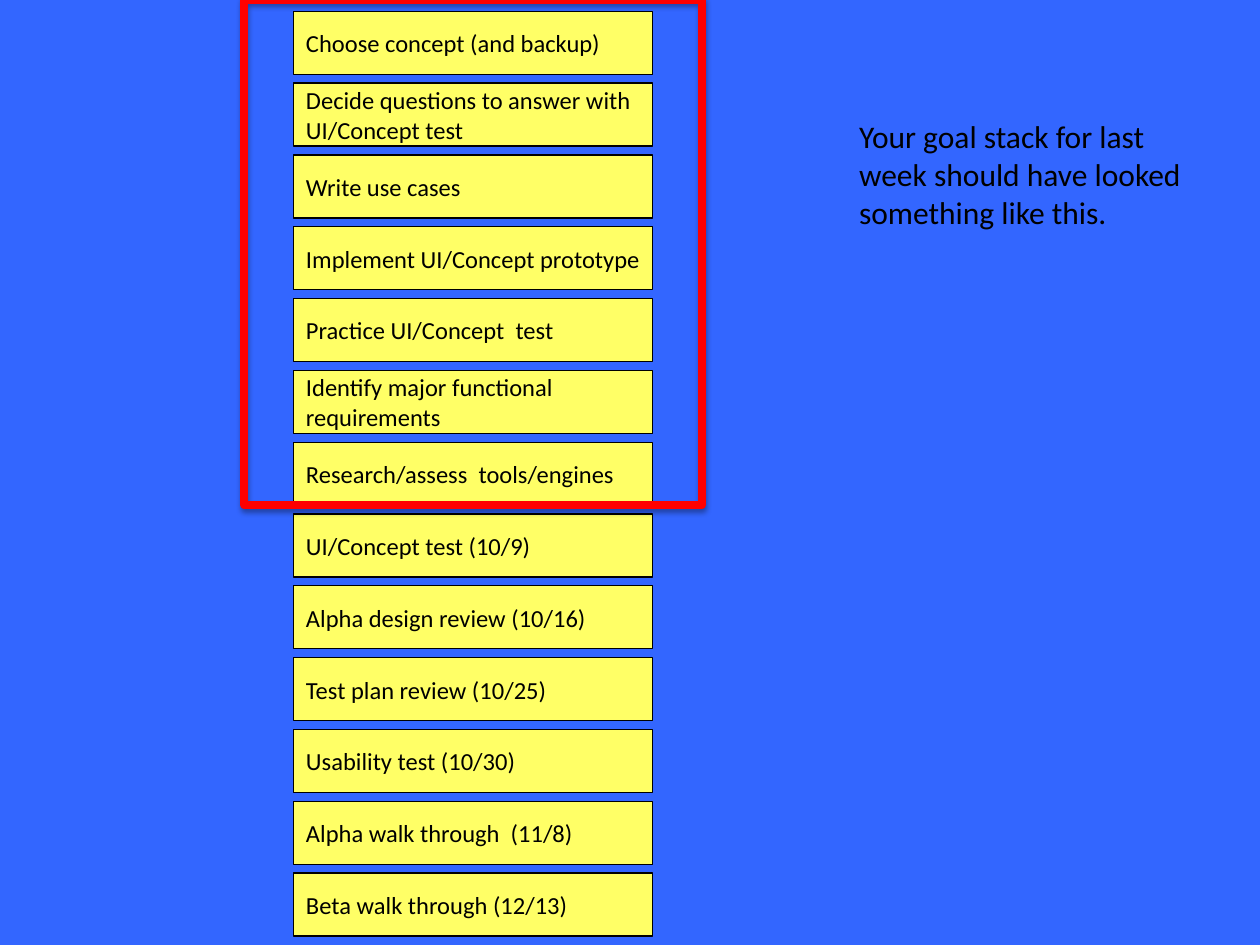
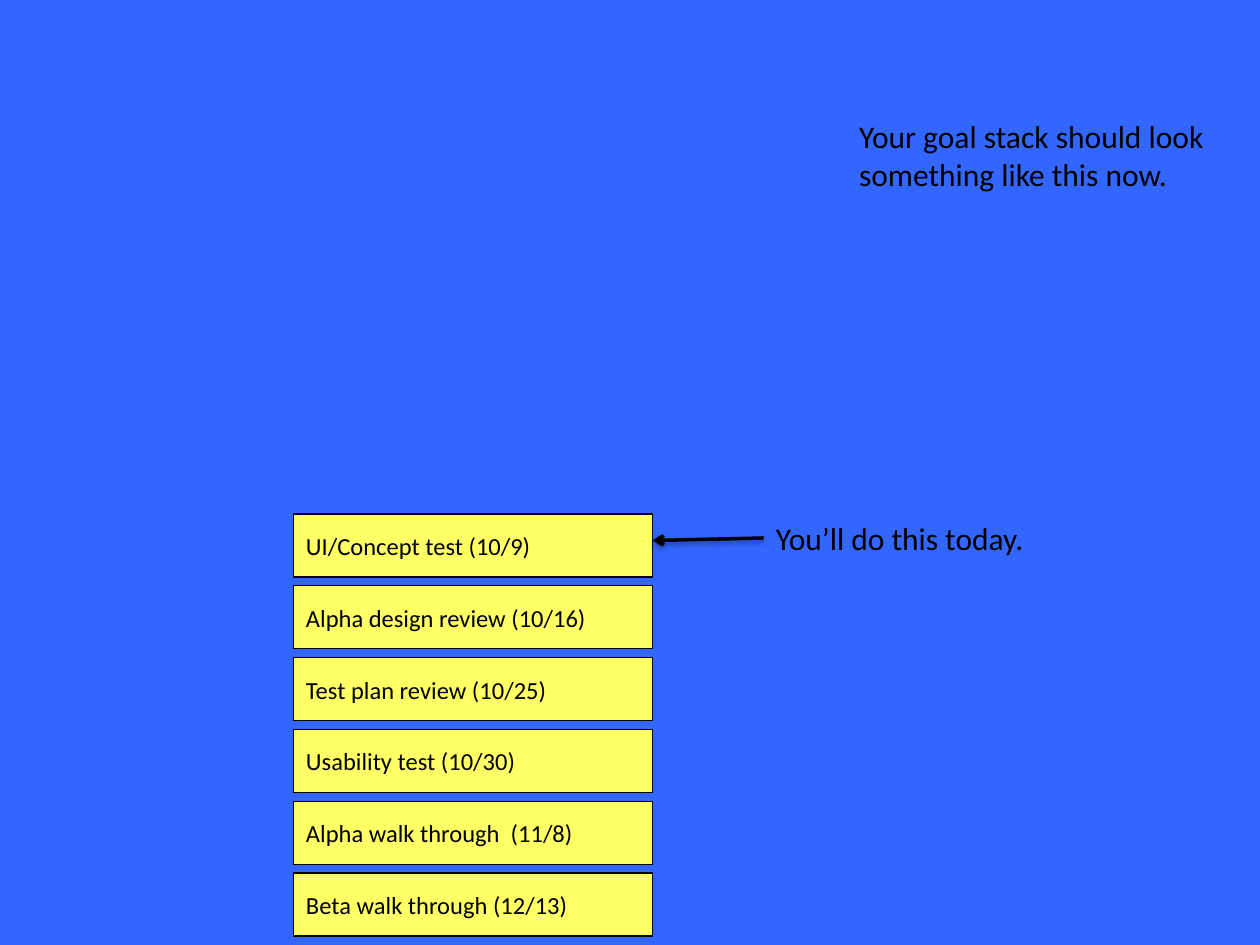
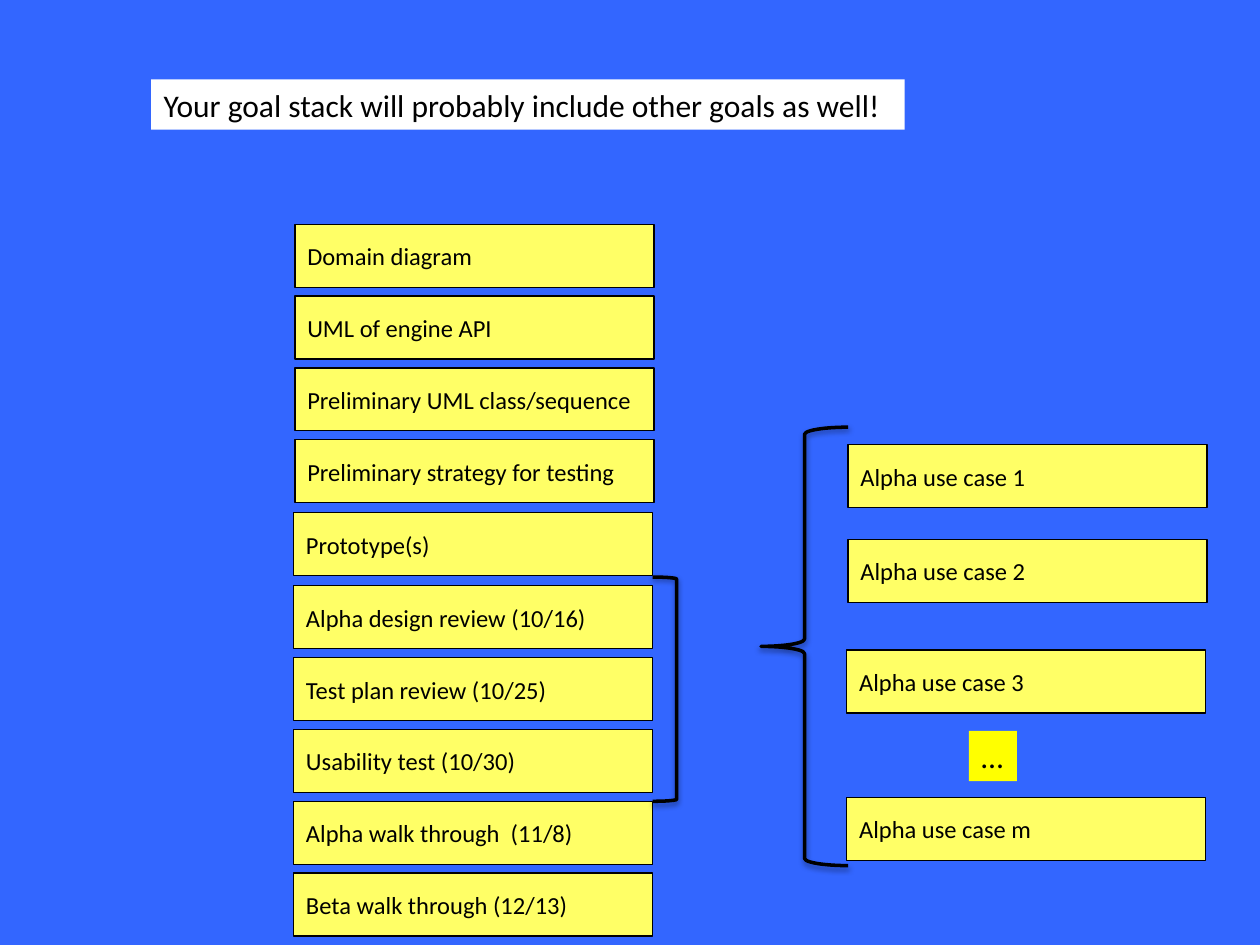
from lxml import etree
from pptx import Presentation
from pptx import util as u
from pptx.dml.color import RGBColor
from pptx.enum import shapes, text
from pptx.oxml.ns import qn

BLUE, YELLOW, BRIGHT = "3366FF", "FFFF66", "FFFF00"
BLACK, WHITE, RED = "000000", "FFFFFF", "FF0000"
FONT = "Calibri"
STACK_LEFT, STACK_TOP, STEP = 2.33, 0.09, 0.57
GOAL_W, GOAL_H = 2.85, 0.5

PREPARATION = [
    "Choose concept (and backup)",
    "Decide questions to answer with\nUI/Concept test",
    "Write use cases",
    "Implement UI/Concept prototype",
    "Practice UI/Concept  test",
    "Identify major functional\nrequirements",
    "Research/assess  tools/engines",
]
CONCEPT_TEST = "UI/Concept test (10/9)"
MILESTONES = [
    "Alpha design review (10/16)",
    "Test plan review (10/25)",
    "Usability test (10/30)",
    "Alpha walk through  (11/8)",
    "Beta walk through (12/13)",
]
DESIGN_GOALS = [
    "Domain diagram",
    "UML of engine API",
    "Preliminary UML class/sequence",
    "Preliminary strategy for testing",
]
USE_CASES = [
    ("Alpha use case 1", 6.73, 3.53),
    ("Alpha use case 2", 6.73, 4.28),
    ("Alpha use case 3", 6.72, 5.16),
    ("Alpha use case m", 6.72, 6.33),
]


def rgb(value):
    return RGBColor.from_string(value)


def inches(*values):
    return [u.Inches(v) for v in values]


class Deck:
    def __init__(self):
        self.prs = Presentation()
        self.prs.slide_width, self.prs.slide_height = inches(10, 7.5)
        fill = self.prs.slide_master.background.fill
        fill.solid()
        fill.fore_color.rgb = rgb(BLUE)
        self.s = None

    def slide(self):
        self.s = self.prs.slides.add_slide(self.prs.slide_layouts[6])

    def set_text(self, sp, content, size, wrap=False):
        tf = sp.text_frame
        tf.text = content
        tf.word_wrap = wrap
        for p in tf.paragraphs:
            p.alignment = text.PP_ALIGN.LEFT
            p.font.name = FONT
            p.font.size = u.Pt(size)
            p.font.color.rgb = rgb(BLACK)

    def outline(self, sp, color, width):
        sp.line.color.rgb = rgb(color)
        sp.line.width = u.Pt(width)

    def shadow(self, sp, opacity, distance):
        effects = etree.SubElement(sp._element.spPr, qn("a:effectLst"))
        outer = etree.SubElement(
            effects, qn("a:outerShdw"), blurRad=str(u.Pt(3.1)),
            dist=str(u.Pt(distance)), dir="5400000", rotWithShape="0")
        color = etree.SubElement(outer, qn("a:srgbClr"), val=BLACK)
        etree.SubElement(color, qn("a:alpha"), val=str(opacity * 1000))

    def goal(self, content, left, top):
        sp = self.s.shapes.add_shape(
            shapes.MSO_SHAPE.RECTANGLE, *inches(left, top, GOAL_W, GOAL_H))
        sp.shadow.inherit = False
        sp.fill.solid()
        sp.fill.fore_color.rgb = rgb(YELLOW)
        self.outline(sp, BLACK, 0.75)
        self.set_text(sp, content, 14)
        sp.text_frame.vertical_anchor = text.MSO_ANCHOR.MIDDLE

    def stack(self, goals, left=STACK_LEFT, top=STACK_TOP):
        for i, content in enumerate(goals):
            self.goal(content, left, top + i * STEP)

    def note(self, content, left, top, width, height=0.4, wrap=False, fill=None):
        sp = self.s.shapes.add_textbox(*inches(left, top, width, height))
        if fill:
            sp.fill.solid()
            sp.fill.fore_color.rgb = rgb(fill)
        self.set_text(sp, content, 18, wrap)
        sp.text_frame.auto_size = text.MSO_AUTO_SIZE.SHAPE_TO_FIT_TEXT

    def marker(self, kind, box, color=BLACK, width=2, opacity=38, distance=1.6):
        sp = self.s.shapes.add_shape(kind, *inches(*box))
        sp.fill.background()
        self.outline(sp, color, width)
        self.shadow(sp, opacity, distance)

    def arrow(self, *ends):
        sp = self.s.shapes.add_connector(
            shapes.MSO_CONNECTOR.STRAIGHT, *inches(*ends))
        self.outline(sp, BLACK, 2)
        ln = sp._element.spPr.find(qn("a:ln"))
        etree.SubElement(ln, qn("a:tailEnd"), type="arrow")
        self.shadow(sp, 38, 1.6)


def main():
    deck = Deck()
    concept_top = STACK_TOP + len(PREPARATION) * STEP
    milestone_top = concept_top + STEP

    deck.slide()
    deck.note("Your goal stack for last week should have looked something like this.",
              6.72, 0.88, 2.94, 1.01, wrap=True)
    deck.stack(PREPARATION + [CONCEPT_TEST] + MILESTONES)
    deck.marker(shapes.MSO_SHAPE.RECTANGLE, (1.94, 0, 3.63, 4.01),
                RED, 4.5, 35, 1.8)

    deck.slide()
    deck.stack([CONCEPT_TEST] + MILESTONES, top=concept_top)
    deck.note("Your goal stack should look something like this now.",
              6.72, 0.88, 2.94, 1.01, wrap=True)
    deck.note("You’ll do this today.", 6.06, 4.07, 2.23)
    deck.arrow(6.06, 4.27, 5.18, 4.29)

    deck.slide()
    deck.stack(MILESTONES, top=milestone_top)
    for use_case in USE_CASES:
        deck.goal(*use_case)
    deck.note("…", 7.69, 5.8, 0.38, fill=BRIGHT)
    deck.marker(shapes.MSO_SHAPE.LEFT_BRACE, (6.04, 3.39, 0.69, 3.48))
    deck.marker(shapes.MSO_SHAPE.RIGHT_BRACKET, (5.18, 4.58, 0.19, 1.78))
    deck.stack(DESIGN_GOALS, left=2.34, top=1.78)
    deck.goal("Prototype(s)", STACK_LEFT, 4.07)
    deck.note("Your goal stack will probably include other goals as well!",
              1.2, 0.63, 5.98, fill=WHITE)

    deck.prs.save("out.pptx")


if __name__ == "__main__":
    main()
